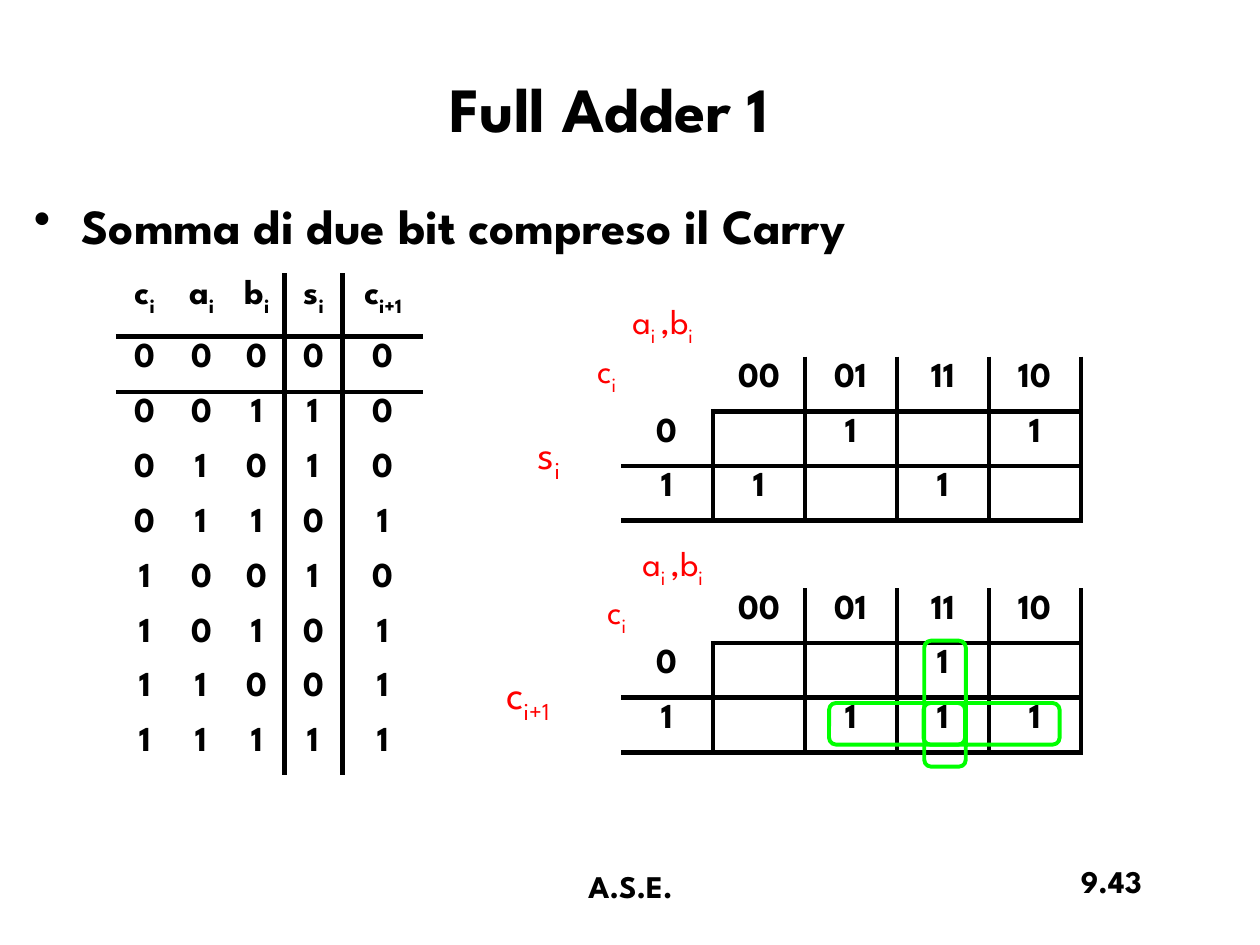
from lxml import etree
from pptx import Presentation
from pptx.dml.color import RGBColor
from pptx.enum import shapes, text
from pptx.oxml import ns
from pptx.util import Inches, Pt

FONT = "League Spartan"
COLORS = {"ink": "000000", "label": "FF0000", "group": "00FF00"}
PLAIN_TABLE_STYLE = "{2D5ABB26-0587-4C30-8999-92F81FD0307C}"

# A text is a list of (characters, is subscript) runs.
TITLE = [("Full Adder 1", False)]
BODY = [("Somma di due bit compreso il Carry", False)]
FOOTER = [("A.S.E.", False)]
PAGE = [("9.43", False)]
C_I = [("c", False), ("i", True)]
S_I = [("s", False), ("i", True)]
C_NEXT = [("c", False), ("i+1", True)]
A_B = [("a", False), ("i ", True), (",b", False), ("i", True)]

TRUTH_HEADER = [C_I, [("a", False), ("i", True)], [("b", False), ("i", True)], S_I, C_NEXT]
TRUTH_ROWS = ["00000", "00110", "01010", "01101", "10010", "10101", "11001", "11111"]
TRUTH_WIDTHS = [0.46, 0.44, 0.44, 0.46, 0.64]
TRUTH_HEIGHTS = [0.5, 0.44, 0.38, 0.44, 0.43, 0.43, 0.43, 0.43, 0.36]

MAP_HEADER = ["", "00", "01", "11", "10"]
MAPS = [  # top, rows
    (4.67, [["0", "", "", "1", ""], ["1", "", "1", "1", "1"]]),
    (2.83, [["0", "", "1", "", "1"], ["1", "1", "", "1", ""]]),
]
MAP_WIDTHS = [0.73] * 5
MAP_HEIGHTS = [0.31] * 3

LABELS = [  # runs, size, left, top, width, height
    (C_I, 20, 4.64, 2.72, 0.41, 0.43),
    (S_I, 24, 4.17, 3.34, 0.44, 0.5),
    (C_NEXT, 24, 3.92, 5.25, 0.72, 0.5),
    (A_B, 20, 4.92, 2.33, 0.77, 0.43),
    (C_I, 20, 4.72, 4.63, 0.41, 0.43),
    (A_B, 20, 5, 4.25, 0.77, 0.43),
]
GROUPS = [  # left, top, width, height, rotation
    (6.58, 5.58, 1.08, 0.33, 0),
    (7.33, 5.58, 1.08, 0.33, 0),
    (7, 5.42, 1, 0.33, 90),
]


def add_runs(paragraph, runs, size, color="ink", bold=True):
    for characters, subscript in runs:
        run = paragraph.add_run()
        run.text = characters
        run.font.name = FONT
        run.font.size = Pt(size)
        run.font.bold = bold
        run.font.color.rgb = RGBColor.from_string(COLORS[color])
        if subscript:
            run.font._element.set("baseline", "-25000")


def add_text(slide, box, runs, size, align=text.PP_ALIGN.LEFT, color="ink", bold=True,
             wrap=True, anchor=text.MSO_ANCHOR.TOP):
    shape = slide.shapes.add_textbox(*map(Inches, box))
    frame = shape.text_frame
    frame.word_wrap = wrap
    frame.vertical_anchor = anchor
    paragraph = frame.paragraphs[0]
    paragraph.alignment = align
    add_runs(paragraph, runs, size, color, bold)
    return paragraph


def add_bullet(paragraph, indent):
    properties = paragraph._p.get_or_add_pPr()
    properties.set("marL", str(Inches(indent)))
    properties.set("indent", str(-Inches(indent)))
    etree.SubElement(properties, ns.qn("a:buChar")).set("char", "•")


def draw_borders(cell, sides):
    properties = cell._tc.get_or_add_tcPr()
    for side in sides:
        line = etree.SubElement(properties, ns.qn(f"a:ln{side}"), w=str(Pt(3)))
        fill = etree.SubElement(line, ns.qn("a:solidFill"))
        etree.SubElement(fill, ns.qn("a:srgbClr"), val=COLORS["ink"])


def add_grid(slide, left, top, widths, heights, rows, line_right, line_below):
    """Add a table; line_right and line_below tell which cells have a line there."""
    frame = slide.shapes.add_table(len(rows), len(widths), Inches(left), Inches(top),
                                   Inches(sum(widths)), Inches(sum(heights)))
    table = frame.table
    table.first_row = table.horz_banding = False
    table._tbl.tblPr[0].text = PLAIN_TABLE_STYLE
    for column, width in zip(table.columns, widths):
        column.width = Inches(width)
    for row, height in zip(table.rows, heights):
        row.height = Inches(height)
    for r, row in enumerate(rows):
        for c, runs in enumerate(row):
            cell = table.cell(r, c)
            paragraph = cell.text_frame.paragraphs[0]
            paragraph.alignment = text.PP_ALIGN.CENTER
            add_runs(paragraph, runs, 20)
            if not runs:  # keeps an empty cell as low as a filled one
                end = etree.SubElement(paragraph._p, ns.qn("a:endParaRPr"), sz="2000")
                etree.SubElement(end, ns.qn("a:latin"), typeface=FONT)
            edges = {"L": c > 0 and line_right(r, c - 1), "R": line_right(r, c),
                     "T": r > 0 and line_below(r - 1, c), "B": line_below(r, c)}
            draw_borders(cell, [side for side, drawn in edges.items() if drawn])
            cell.fill.background()


def plain(row):
    return [[(value, False)] if value else [] for value in row]


def not_corner(r, c):
    return (r, c) != (0, 0)


def main():
    presentation = Presentation()
    presentation.slide_width, presentation.slide_height = Inches(10), Inches(7.5)
    slide = presentation.slides.add_slide(presentation.slide_layouts[6])

    add_text(slide, (0, 0.23, 9.67, 1.25), TITLE, 36, text.PP_ALIGN.CENTER,
             anchor=text.MSO_ANCHOR.MIDDLE)
    add_bullet(add_text(slide, (0.17, 1.5, 9.67, 5.17), BODY, 28), 0.38)

    add_grid(slide, 0.92, 2.17, TRUTH_WIDTHS, TRUTH_HEIGHTS,
             [TRUTH_HEADER] + [plain(row) for row in TRUTH_ROWS],
             lambda r, c: c in (2, 3), lambda r, c: r == 0)
    for top, rows in MAPS:
        add_grid(slide, 4.93, top, MAP_WIDTHS, MAP_HEIGHTS,
                 [plain(row) for row in [MAP_HEADER] + rows], not_corner, not_corner)

    for runs, size, *box in LABELS:
        add_text(slide, box, runs, size, color="label", bold=False, wrap=False)

    for left, top, width, height, rotation in GROUPS:
        shape = slide.shapes.add_shape(shapes.MSO_SHAPE.ROUNDED_RECTANGLE,
                                       *map(Inches, (left, top, width, height)))
        shape.rotation = rotation
        shape.shadow.inherit = False
        shape.fill.background()
        shape.line.color.rgb = RGBColor.from_string(COLORS["group"])
        shape.line.width = Pt(2.25)

    add_text(slide, (7.08, 6.79, 2.08, 0.5), PAGE, 18, text.PP_ALIGN.RIGHT)
    add_text(slide, (3.42, 6.83, 3.17, 0.5), FOOTER, 18, text.PP_ALIGN.CENTER)
    presentation.save("out.pptx")


if __name__ == "__main__":
    main()
